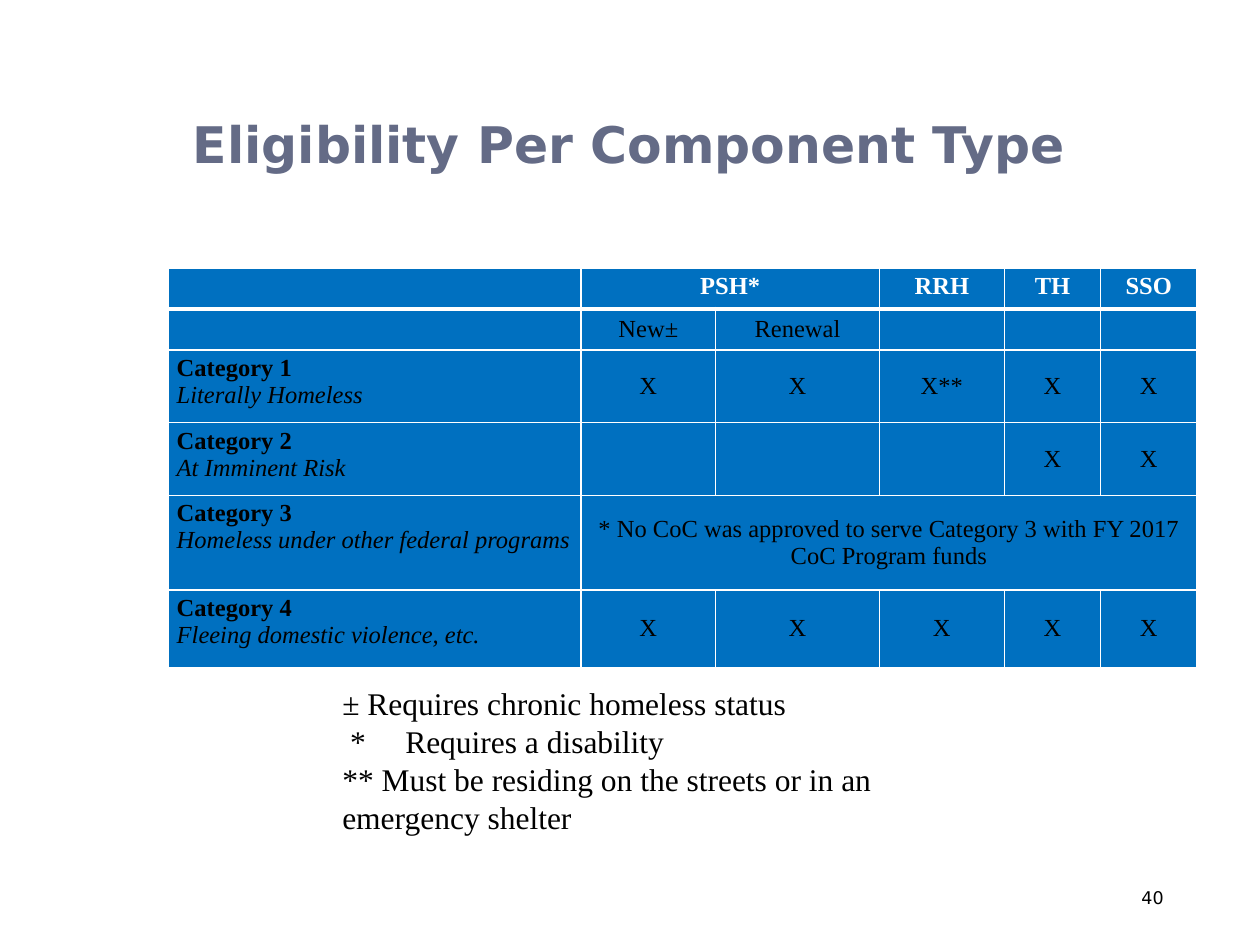
"""Build the slide on eligibility per component type."""
from lxml import etree
from pptx import Presentation
from pptx.dml.color import RGBColor
from pptx.enum.text import MSO_ANCHOR, MSO_AUTO_SIZE, PP_ALIGN
from pptx.oxml.ns import qn
from pptx.util import Pt

LEFT, CENTER, RIGHT = PP_ALIGN.LEFT, PP_ALIGN.CENTER, PP_ALIGN.RIGHT
TOP, MIDDLE, BOTTOM = MSO_ANCHOR.TOP, MSO_ANCHOR.MIDDLE, MSO_ANCHOR.BOTTOM
NO_AUTOFIT = MSO_AUTO_SIZE.NONE

SLATE = RGBColor(0x64, 0x6B, 0x86)
BLUE = RGBColor(0x00, 0x70, 0xC0)
WHITE = RGBColor(0xFF, 0xFF, 0xFF)
BLACK = RGBColor(0x00, 0x00, 0x00)
SERIF, SANS = "Times New Roman", "DejaVu Sans"

TITLE = "Eligibility Per Component Type"
PAGE_NUMBER = "40"
ROWS = [
    ["", "PSH*", "", "RRH", "TH", "SSO"],
    ["", "New±", "Renewal", "", "", ""],
    ["Category 1\nLiterally Homeless", "X", "X", "X**", "X", "X"],
    ["Category 2\nAt Imminent Risk", "", "", "", "X", "X"],
    ["Category 3\nHomeless under other federal programs",
     "* No CoC was approved to serve Category 3 with FY 2017 CoC Program funds", "", "", "", ""],
    ["Category 4\nFleeing domestic violence, etc.", "X", "X", "X", "X", "X"],
]
MERGES = [((0, 1), (0, 2)), ((4, 1), (4, 5))]
COLUMN_WIDTHS = [236, 77, 93.5, 71.5, 55, 55]
ROW_HEIGHTS = [23.5, 23.5, 41.5, 41.5, 54, 44.5]
CELL_SIZE = 14
FOOTNOTES = [
    "± Requires chronic homeless status",
    "*\tRequires a disability",
    "** Must be residing on the streets or in an emergency shelter",
]


def style_runs(paragraph, font_name, size, color, bold=False, italic=False):
    for run in paragraph.runs:
        font = run.font
        font.name, font.size = font_name, Pt(size)
        font.bold, font.italic = bold, italic
        font.color.rgb = color


def add_border(cell, position, side, width):
    line = etree.Element(qn(f"a:ln{side}"), w=str(Pt(width)))
    fill = etree.SubElement(line, qn("a:solidFill"))
    etree.SubElement(fill, qn("a:srgbClr"), val=str(WHITE))
    cell._tc.get_or_add_tcPr().insert(position, line)


def format_cell(cell, row, column):
    is_header, is_category = row == 0, column == 0
    cell.fill.solid()
    cell.fill.fore_color.rgb = BLUE
    cell.margin_left = cell.margin_right = Pt(5)
    cell.margin_top = cell.margin_bottom = Pt(2.75)
    cell.vertical_anchor = TOP if is_header or is_category else MIDDLE
    for index, paragraph in enumerate(cell.text_frame.paragraphs):
        paragraph.alignment = LEFT if is_category else CENTER
        style_runs(paragraph, SERIF, CELL_SIZE, WHITE if is_header else BLACK,
                   bold=is_header or (is_category and index == 0),
                   italic=is_category and index == 1)
        if not paragraph.runs:
            etree.SubElement(paragraph._p, qn("a:endParaRPr"), sz=str(CELL_SIZE * 100))
    widths = {"L": 1, "R": 1, "T": 3 if row == 1 else 1, "B": 3 if is_header else 1}
    for position, (side, width) in enumerate(widths.items()):
        add_border(cell, position, side, width)


def add_eligibility_table(slide):
    frame = slide.shapes.add_table(len(ROWS), len(COLUMN_WIDTHS), Pt(96), Pt(153),
                                   Pt(sum(COLUMN_WIDTHS)), Pt(sum(ROW_HEIGHTS)))
    table = frame.table
    for column, width in zip(table.columns, COLUMN_WIDTHS):
        column.width = Pt(width)
    for row, height in zip(table.rows, ROW_HEIGHTS):
        row.height = Pt(height)
    for row, texts in enumerate(ROWS):
        for column, text in enumerate(texts):
            cell = table.cell(row, column)
            cell.text_frame.text = text
            format_cell(cell, row, column)
    for first, last in MERGES:
        table.cell(*first).merge(table.cell(*last))


def add_title(slide):
    title = slide.shapes.title
    title.left, title.top, title.width, title.height = Pt(103), Pt(58), Pt(620), Pt(45)
    frame = title.text_frame
    frame.text = TITLE
    frame.auto_size = NO_AUTOFIT
    frame.vertical_anchor = BOTTOM
    frame.paragraphs[0].alignment = LEFT
    style_runs(frame.paragraphs[0], SANS, 28.8, SLATE, bold=True)


def add_page_number(slide):
    frame = slide.shapes.add_textbox(Pt(588), Pt(498), Pt(84), Pt(30)).text_frame
    frame.text = PAGE_NUMBER
    frame.word_wrap = True
    frame.vertical_anchor = MIDDLE
    frame.paragraphs[0].alignment = RIGHT
    style_runs(frame.paragraphs[0], SANS, 10, BLACK)


def add_footnotes(slide):
    frame = slide.shapes.add_textbox(Pt(188.5), Pt(387.5), Pt(378), Pt(94)).text_frame
    frame.word_wrap = True
    frame.text = "\n".join(FOOTNOTES)
    for paragraph in frame.paragraphs:
        if "\t" in paragraph.text:
            properties = paragraph._p.get_or_add_pPr()
            properties.set("marL", "0")
            properties.set("indent", str(Pt(4.5)))
            tabs = etree.SubElement(properties, qn("a:tabLst"))
            etree.SubElement(tabs, qn("a:tab"), pos=str(Pt(22.5)), algn="l")
        style_runs(paragraph, SERIF, 18, BLACK)


def main():
    presentation = Presentation()
    presentation.slide_width, presentation.slide_height = Pt(720), Pt(540)
    slide = presentation.slides.add_slide(presentation.slide_layouts[5])
    add_title(slide)
    add_eligibility_table(slide)
    add_page_number(slide)
    add_footnotes(slide)
    presentation.save("out.pptx")


if __name__ == "__main__":
    main()
